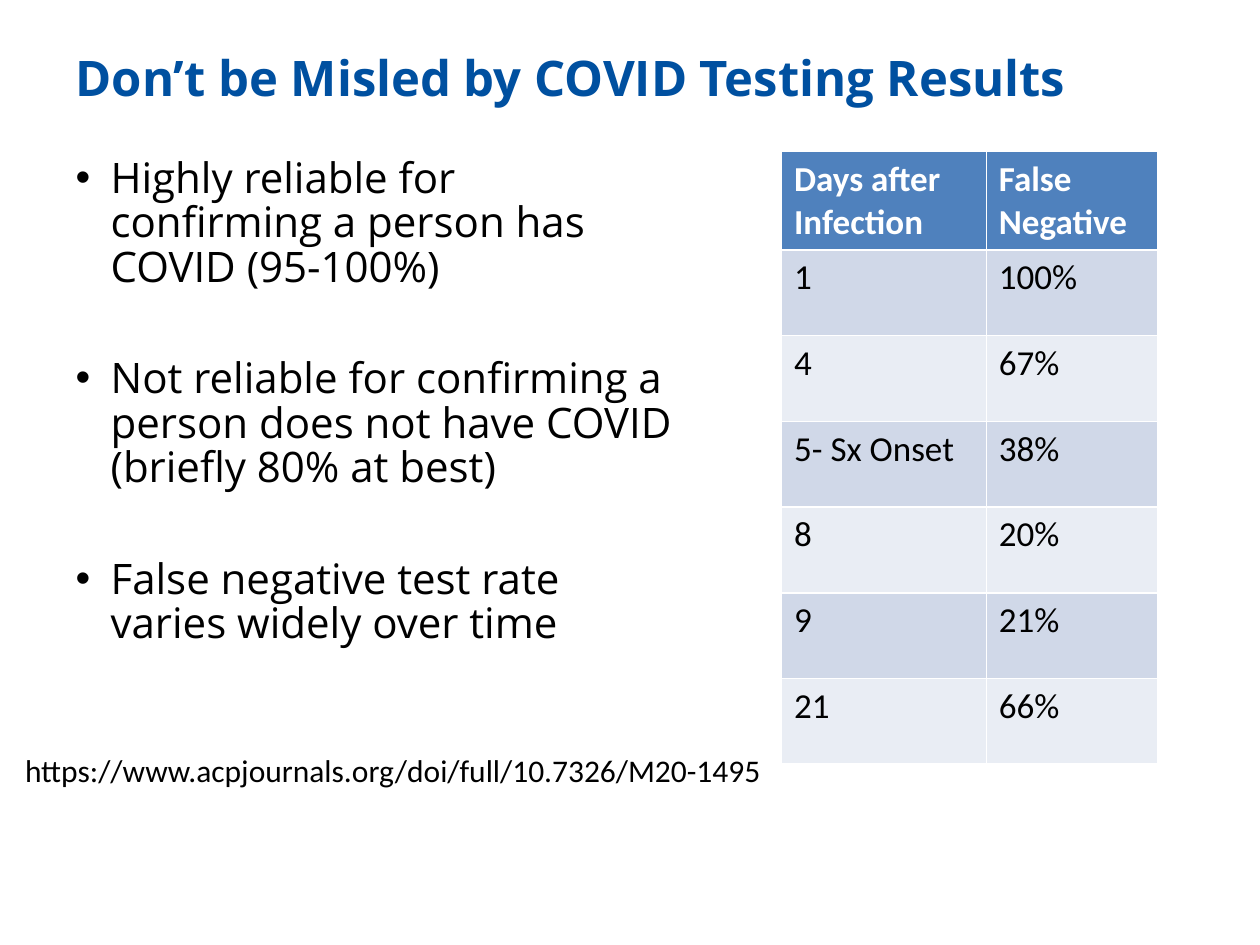
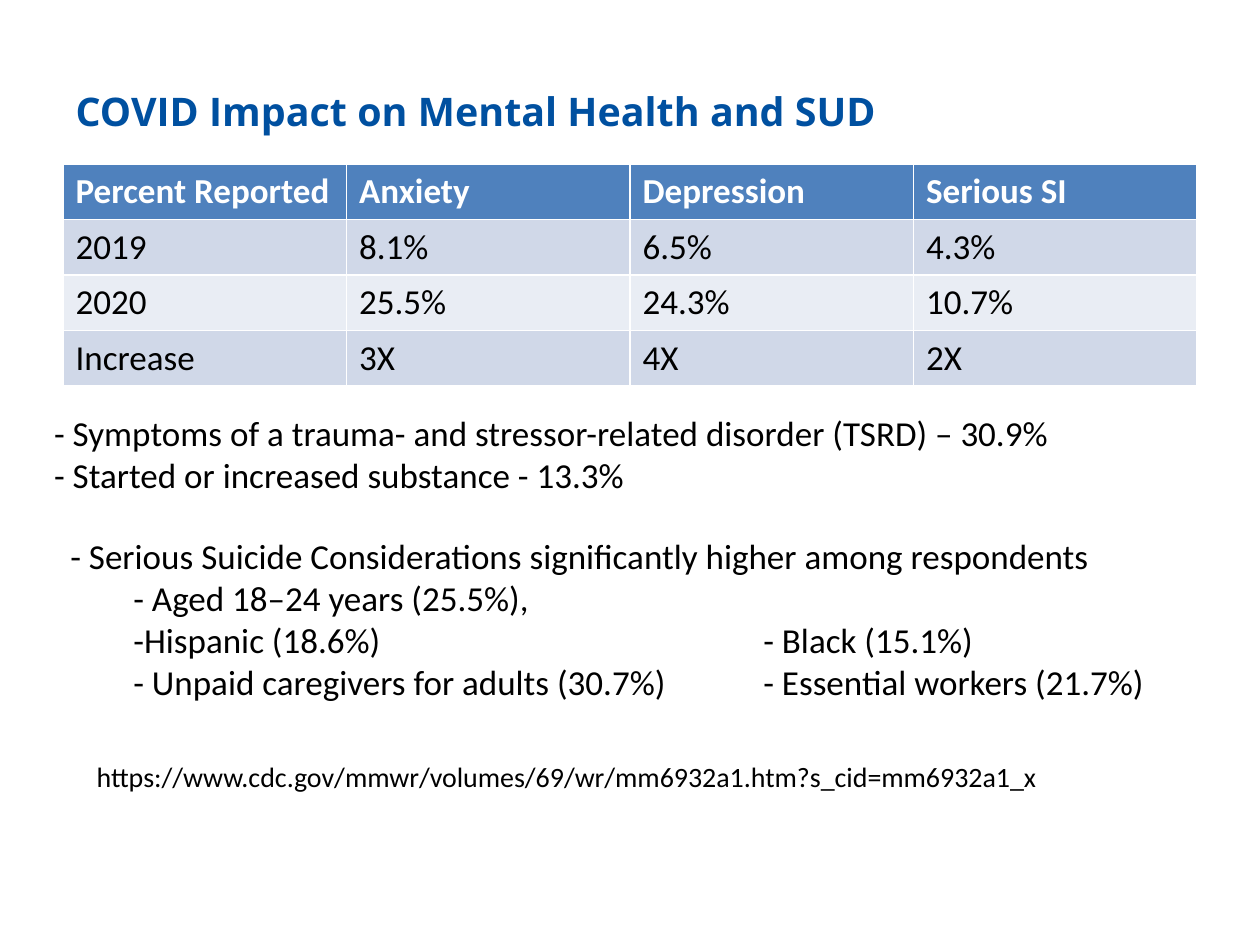
from pptx import Presentation
from pptx.dml.color import RGBColor
from pptx.enum import text as t
from pptx.oxml import ns, xmlchemy
from pptx.util import Pt

TITLE_BLUE = RGBColor(0x00, 0x50, 0xA0)
HEADER_BLUE = RGBColor(0x4F, 0x81, 0xBD)
BAND_COLOURS = (RGBColor(0xD0, 0xD8, 0xE8), RGBColor(0xE9, 0xED, 0xF4))
BLACK = RGBColor(0, 0, 0)
WHITE = RGBColor(0xFF, 0xFF, 0xFF)
TITLE_FONT = "Open Sans"
TEXT_FONT = "Calibri"
TITLE_AND_CONTENT, TITLE_ONLY = 1, 5

TESTING = {
    "title": "Don’t be Misled by COVID Testing Results",
    "points": [
        "Highly reliable for confirming a person has COVID (95-100%)",
        "Not reliable for confirming a person does not have COVID (briefly 80% at best)",
        "False negative test rate varies widely over time",
    ],
    "false_negatives": [
        ("Days after Infection", "False Negative"),
        ("1", "100%"),
        ("4", "67%"),
        ("5- Sx Onset", "38%"),
        ("8", "20%"),
        ("9", "21%"),
        ("21", "66%"),
    ],
    "source": "https://www.acpjournals.org/doi/full/10.7326/M20-1495",
}

IMPACT = {
    "title": "COVID Impact on Mental Health and SUD",
    "reported": [
        ("Percent Reported", "Anxiety", "Depression", "Serious SI"),
        ("2019", "8.1%", "6.5%", "4.3%"),
        ("2020", "25.5%", "24.3%", "10.7%"),
        ("Increase", "3X", "4X", "2X"),
    ],
    "symptoms": [
        "- Symptoms of a trauma- and stressor-related disorder (TSRD) – 30.9%",
        "- Started or increased substance - 13.3%",
    ],
    "suicide_risk": [
        "- Serious Suicide Considerations significantly higher among respondents",
        "\t- Aged 18–24 years (25.5%),",
        "\t-Hispanic (18.6%)\t- Black (15.1%)",
        "\t- Unpaid caregivers for adults (30.7%)\t- Essential workers (21.7%)",
    ],
    "source": "https://www.cdc.gov/mmwr/volumes/69/wr/mm6932a1.htm?s_cid=mm6932a1_x",
}
RISK_TABS = (36, 396)


def style_runs(paragraph, size, font=TEXT_FONT, colour=BLACK, bold=False):
    for run in paragraph.runs:
        run.font.size = Pt(size)
        run.font.name = font
        run.font.color.rgb = colour
        run.font.bold = bold


def place(shape, left, top, width, height):
    shape.left, shape.top, shape.width, shape.height = map(Pt, (left, top, width, height))


def add_titled_slide(deck, layout, title, top, size):
    slide = deck.slides.add_slide(deck.slide_layouts[layout])
    heading = slide.shapes.title
    place(heading, 36, top, 648, 38)
    frame = heading.text_frame
    frame.text = title
    frame.auto_size = t.MSO_AUTO_SIZE.NONE
    frame.vertical_anchor = t.MSO_ANCHOR.MIDDLE
    frame.paragraphs[0].alignment = t.PP_ALIGN.LEFT
    style_runs(frame.paragraphs[0], size, TITLE_FONT, TITLE_BLUE, True)
    return slide


def fill_bullets(body, points):
    frame = body.text_frame
    frame.text = "\n".join(points)
    frame.auto_size = t.MSO_AUTO_SIZE.NONE
    frame.margin_top = Pt(6)
    for i, point in enumerate(frame.paragraphs):
        properties = point._p.get_or_add_pPr()
        properties.set("marL", str(Pt(20)))
        properties.set("indent", str(-Pt(20)))
        point.line_spacing = 0.88
        point.space_before = Pt(38.5 if i else 0)
        style_runs(point, 24, TITLE_FONT)


def add_banded_table(slide, rows, left, top, column_widths, header_height, row_height):
    """White grid lines come from the default table style."""
    height = header_height + row_height * (len(rows) - 1)
    table = slide.shapes.add_table(len(rows), len(column_widths), Pt(left), Pt(top),
                                   Pt(sum(column_widths)), Pt(height)).table
    for column, width in zip(table.columns, column_widths):
        column.width = Pt(width)
    for r, values in enumerate(rows):
        header = r == 0
        table.rows[r].height = Pt(header_height if header else row_height)
        for c, value in enumerate(values):
            cell = table.cell(r, c)
            cell.text = value
            cell.fill.solid()
            cell.fill.fore_color.rgb = HEADER_BLUE if header else BAND_COLOURS[(r - 1) % 2]
            style_runs(cell.text_frame.paragraphs[0], 20,
                       colour=WHITE if header else BLACK, bold=header)


def add_lines(slide, lines, box, size, tabs=()):
    frame = slide.shapes.add_textbox(*map(Pt, box)).text_frame
    frame.word_wrap = True
    frame.auto_size = t.MSO_AUTO_SIZE.SHAPE_TO_FIT_TEXT
    frame.text = "\n".join(lines)
    for line in frame.paragraphs:
        if tabs:
            stops = xmlchemy.OxmlElement("a:tabLst")
            for position in tabs:
                stop = stops.makeelement(ns.qn("a:tab"), {"pos": str(Pt(position)), "algn": "l"})
                stops.append(stop)
            line._p.get_or_add_pPr().append(stops)
        style_runs(line, size)


def build_testing(deck):
    slide = add_titled_slide(deck, TITLE_AND_CONTENT, TESTING["title"], 25.2, 28)
    body = slide.placeholders[1]
    place(body, 36, 84.2, 357, 332.6)
    fill_bullets(body, TESTING["points"])
    add_banded_table(slide, TESTING["false_negatives"], 446.6, 86.6, (117, 98), 55, 49)
    add_lines(slide, [TESTING["source"]], (7.2, 425.5, 440.6, 29), 18)


def build_impact(deck):
    slide = add_titled_slide(deck, TITLE_ONLY, IMPACT["title"], 44, 22.5)
    add_banded_table(slide, IMPACT["reported"], 36, 93.8, (162,) * 4, 31.2, 31.2)
    add_lines(slide, [IMPACT["source"]], (48.2, 430.6, 635.8, 26.6), 16)
    add_lines(slide, IMPACT["symptoms"], (23.8, 231.8, 660.2, 55.4), 20)
    add_lines(slide, IMPACT["suicide_risk"], (33.1, 301.7, 663.1, 104.4), 20, RISK_TABS)


def main():
    deck = Presentation()
    deck.slide_width, deck.slide_height = Pt(720), Pt(540)
    build_testing(deck)
    build_impact(deck)
    deck.save("out.pptx")


if __name__ == "__main__":
    main()
